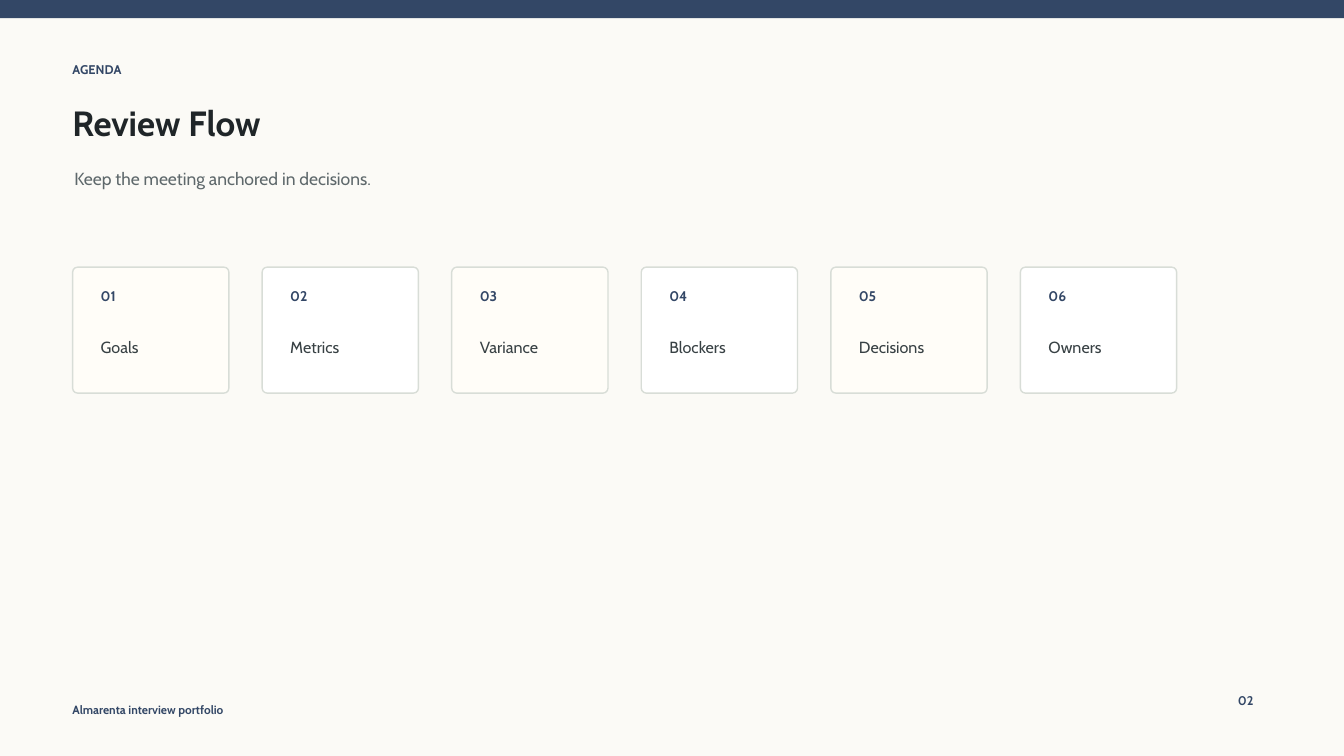
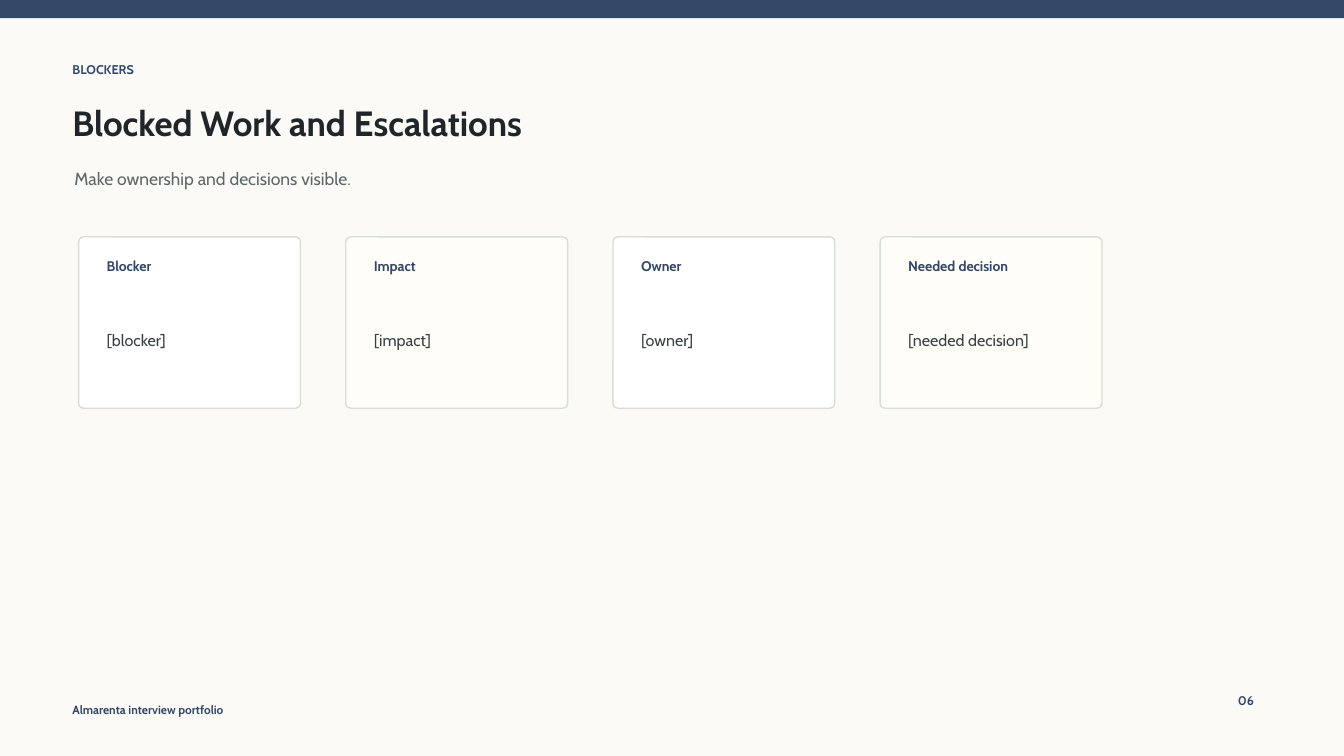
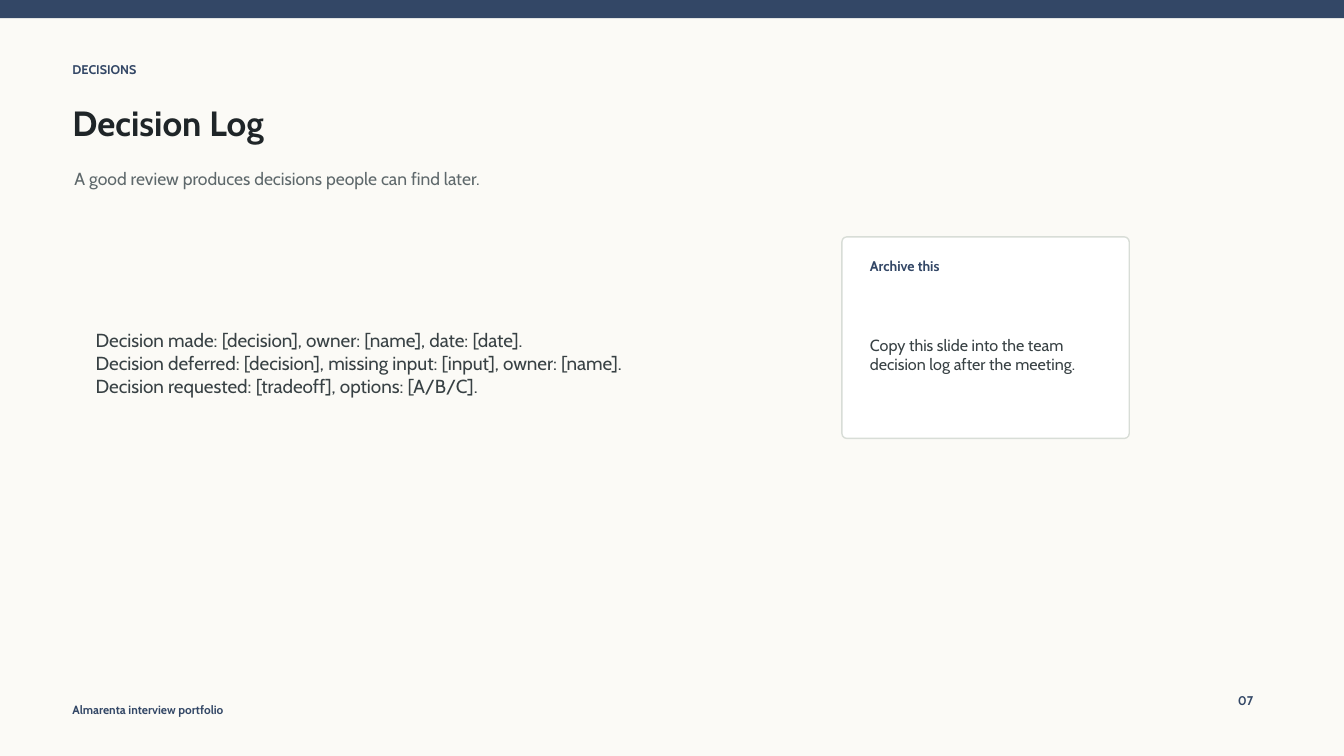
from pptx import Presentation
from pptx.dml.color import RGBColor
from pptx.enum.shapes import MSO_SHAPE as Shape
from pptx.enum.text import MSO_ANCHOR as Anchor
from pptx.util import Pt

EMU_PER_PX = 9144
WIDTH, HEIGHT = 1333, 750
FONT = "Cabin"
PAPER, WHITE, CREAM = "FBFAF6", "FFFFFF", "FFFDF8"
NAVY, INK, GREY, BODY, BORDER = "334766", "1F2528", "5E686B", "384144", "D8DDD7"
FOOTER = "Almarenta interview portfolio"
STYLES = {
    "footer": {"size": 8.5, "bold": True, "color": NAVY},
    "label": {"size": 9, "bold": True, "color": NAVY},
    "title": {"size": 25, "bold": True, "color": INK},
    "subtitle": {"size": 12.5, "bold": False, "color": GREY},
    "heading": {"size": 10, "bold": True, "color": NAVY},
    "body": {"size": 11.5, "bold": False, "color": BODY},
    "log": {"size": 13.5, "bold": False, "color": BODY},
}


def px(*lengths):
    return [length * EMU_PER_PX for length in lengths]


def rgb(color):
    return RGBColor.from_string(color)


class Deck:
    def __init__(self):
        self.presentation = Presentation()
        self.presentation.slide_width, self.presentation.slide_height = px(WIDTH, HEIGHT)
        background = self.presentation.slide_master.background.fill
        background.solid()
        background.fore_color.rgb = rgb(PAPER)
        self.slide = None

    def start(self, number, label, title, subtitle):
        blank = self.presentation.slide_layouts[6]
        self.slide = self.presentation.slides.add_slide(blank)
        self.box(Shape.RECTANGLE, 0, 0, WIDTH, 18, NAVY)
        self.text(FOOTER, "footer", 62, 694, 300, 20)
        self.text(number, "label", 1218, 682, 50, 25)
        self.text(label, "label", 62, 58, 480, 22)
        self.text(title, "title", 62, 94, 980, 55)
        self.text(subtitle, "subtitle", 64, 156, 1080, 42)

    def box(self, kind, left, top, width, height, fill, border=None):
        shape = self.slide.shapes.add_shape(kind, *px(left, top, width, height))
        shape.shadow.inherit = False
        shape.fill.solid()
        shape.fill.fore_color.rgb = rgb(fill)
        if border:
            shape.line.color.rgb = rgb(border)
            shape.line.width = Pt(1)
        else:
            shape.line.fill.background()
        return shape

    def text(self, content, style, left, top, width, height):
        frame = self.slide.shapes.add_textbox(*px(left, top, width, height)).text_frame
        for name, value in {"word_wrap": True, "vertical_anchor": Anchor.MIDDLE}.items():
            setattr(frame, name, value)
        frame.text = content
        look = STYLES[style]
        font_values = {"name": FONT, "size": Pt(look["size"]), "bold": look["bold"]}
        for paragraph in frame.paragraphs:
            for run in paragraph.runs:
                for name, value in font_values.items():
                    setattr(run.font, name, value)
                run.font.color.rgb = rgb(look["color"])

    def card(self, heading, body, left, top, width, height, fill):
        card = self.box(Shape.ROUNDED_RECTANGLE, left, top, width, height, fill, BORDER)
        card.adjustments[0] = 5 / min(width, height)
        self.text(heading, "heading", left + 18, top + 16, width - 36, 25)
        self.text(body, "body", left + 18, top + 48, width - 36, height - 62)

    def card_row(self, cards, left, top, width, height, gap, fills):
        for index, (heading, body) in enumerate(cards):
            card_left = left + index * (width + gap)
            self.card(heading, body, card_left, top, width, height, fills[index % len(fills)])


def main():
    deck = Deck()

    deck.start("02", "AGENDA", "Review Flow", "Keep the meeting anchored in decisions.")
    topics = ["Goals", "Metrics", "Variance", "Blockers", "Decisions", "Owners"]
    steps = [(f"{number:02}", topic) for number, topic in enumerate(topics, 1)]
    deck.card_row(steps, 72, 265, 155, 125, 33, [CREAM, WHITE])

    deck.start("06", "BLOCKERS", "Blocked Work and Escalations",
               "Make ownership and decisions visible.")
    fields = ["Blocker", "Impact", "Owner", "Needed decision"]
    prompts = [(field, f"[{field.lower()}]") for field in fields]
    deck.card_row(prompts, 78, 235, 220, 170, 45, [WHITE, CREAM])

    deck.start("07", "DECISIONS", "Decision Log",
               "A good review produces decisions people can find later.")
    decisions = [
        "Decision made: [decision], owner: [name], date: [date].",
        "Decision deferred: [decision], missing input: [input], owner: [name].",
        "Decision requested: [tradeoff], options: [A/B/C].",
    ]
    deck.text("\n".join(decisions), "log", 85, 220, 700, 280)
    deck.card("Archive this", "Copy this slide into the team decision log after the meeting.",
              835, 235, 285, 200, WHITE)

    deck.presentation.save("out.pptx")


if __name__ == "__main__":
    main()
